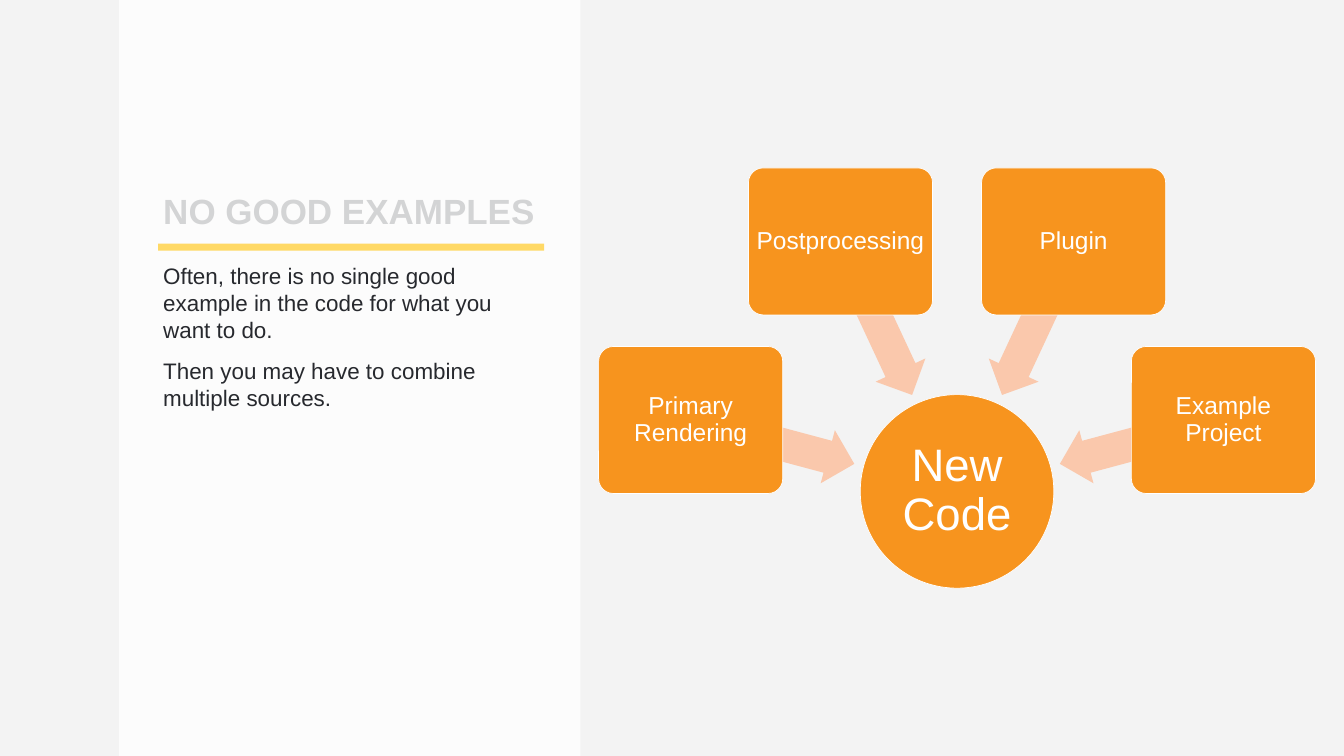
import math

import lxml.etree
import pptx
import pptx.dml.color
import pptx.enum.shapes
import pptx.enum.text
import pptx.oxml.ns
import pptx.util

Pt = pptx.util.Pt
Shapes = pptx.enum.shapes.MSO_SHAPE
Anchor = pptx.enum.text.MSO_ANCHOR
Align = pptx.enum.text.PP_ALIGN

WIDTH, HEIGHT = 1920, 1080
ORANGE, PEACH, WHITE, INK = "F7941E", "FAC8AC", "FFFFFF", "27292E"
SOURCES = [
    (195, "Primary Rendering"),
    (245, "Postprocessing"),
    (295, "Plugin"),
    (345, "Example Project"),
]


def color(hex_string):
    return pptx.dml.color.RGBColor.from_string(hex_string)


def add_shape(slide, kind, left, top, width, height, fill, line=None):
    shape = slide.shapes.add_shape(kind, Pt(left), Pt(top), Pt(width), Pt(height))
    shape.shadow.inherit = False
    shape.fill.solid()
    shape.fill.fore_color.rgb = color(fill)
    if line:
        shape.line.color.rgb = color(line)
        shape.line.width = Pt(1)
    else:
        shape.line.fill.background()
    return shape


def add_centered(slide, kind, center, size, fill, line=None):
    left, top = (middle - length / 2 for middle, length in zip(center, size))
    return add_shape(slide, kind, left, top, *size, fill, line)


def set_text(shape, text, size, hex_string, bold=False,
             anchor=Anchor.TOP, align=Align.LEFT, spacing=1.0, before=0):
    frame = shape.text_frame
    frame.text = text
    frame.word_wrap = True
    frame.auto_size = pptx.enum.text.MSO_AUTO_SIZE.NONE
    frame.vertical_anchor = anchor
    for paragraph in frame.paragraphs:
        paragraph.alignment = align
        paragraph.line_spacing = spacing
        paragraph.space_before = Pt(before)
        for run in paragraph.runs:
            run.font.name = "Arial"
            run.font.size = Pt(size)
            run.font.bold = bold
            run.font.color.rgb = color(hex_string)


def set_label(shape, text, size):
    set_text(shape, text, size, WHITE, anchor=Anchor.MIDDLE,
             align=Align.CENTER, spacing=0.9)
    frame = shape.text_frame
    frame.margin_left = frame.margin_right = Pt(4)
    frame.margin_top = frame.margin_bottom = Pt(4)


def build_text_panel(slide, left, top, width, height):
    panel = add_shape(slide, Shapes.RECTANGLE, left, top, width, height, WHITE)
    fill_color = panel.fill._xPr.find(".//" + pptx.oxml.ns.qn("a:srgbClr"))
    lxml.etree.SubElement(fill_color, pptx.oxml.ns.qn("a:alpha"), val="80000")

    inner_left, inner_width = left + 56, 551.5
    add_shape(slide, Shapes.RECTANGLE, inner_left, top + 348, inner_width, 10, "FFD966")

    title = slide.shapes.title
    title.left, title.top = Pt(inner_left), Pt(top + 171)
    title.width, title.height = Pt(inner_width), Pt(163)
    set_text(title, "NO GOOD EXAMPLES", 50, INK, bold=True, anchor=Anchor.BOTTOM)

    body_top = top + 371.5
    body = slide.shapes.add_textbox(Pt(inner_left), Pt(body_top), Pt(inner_width),
                                    Pt(top + height - body_top))
    set_text(body, "Often, there is no single good example in the code for what you want to do.\n"
             "Then you may have to combine multiple sources.", 32, INK, before=20)


def build_converging_diagram(slide, left, top, width, height):
    hub_center = (left + width / 2, top + height - 138)

    def around_hub(angle, radius):
        radians = math.radians(angle)
        return (hub_center[0] + radius * math.cos(radians),
                hub_center[1] + radius * math.sin(radians))

    hub = add_centered(slide, Shapes.OVAL, hub_center, (276.5, 276.5), ORANGE, WHITE)
    set_label(hub, "New Code", 65)

    for angle, label in SOURCES:
        arrow = add_centered(slide, Shapes.LEFT_ARROW, around_hub(angle, 273),
                             (242, 78.5), PEACH)
        arrow.adjustments[0] = 0.6
        arrow.adjustments[1] = 0.5
        arrow.rotation = angle
        box = add_centered(slide, Shapes.ROUNDED_RECTANGLE, around_hub(angle, 394),
                           (263, 210), ORANGE, WHITE)
        box.adjustments[0] = 0.1
        set_label(box, label, 35)


def main():
    presentation = pptx.Presentation()
    presentation.slide_width, presentation.slide_height = Pt(WIDTH), Pt(HEIGHT)
    slide = presentation.slides.add_slide(presentation.slide_layouts.get_by_name("Title Only"))
    slide.background.fill.solid()
    slide.background.fill.fore_color.rgb = color("F3F3F3")
    build_text_panel(slide, 170, 0, 659, HEIGHT)
    build_converging_diagram(slide, 855.5, 240, 1023.5, 600)
    presentation.save("out.pptx")


if __name__ == "__main__":
    main()
